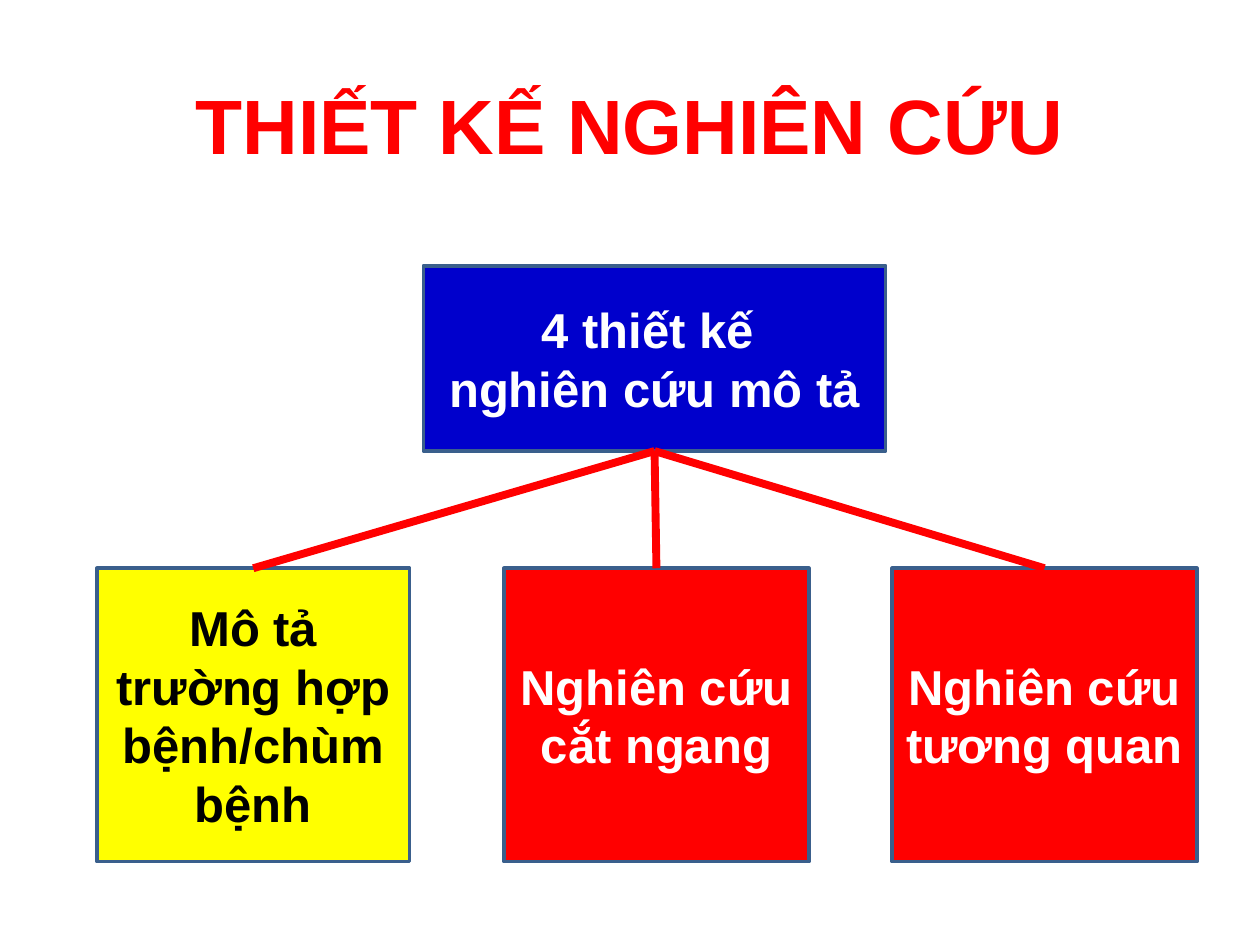
from dataclasses import dataclass

import lxml.etree
import pptx
import pptx.dml.color
import pptx.enum.shapes
import pptx.enum.text
import pptx.oxml.ns
import pptx.util

Inches = pptx.util.Inches
Pt = pptx.util.Pt

RED, BLUE, YELLOW = "FF0000", "0000CC", "FFFF00"
WHITE, BLACK, OUTLINE = "FFFFFF", "000000", "3A5F8C"


@dataclass
class Box:
    lines: list[str]
    left: float
    top: float
    width: float
    height: float
    fill: str
    text_color: str = WHITE

    @property
    def center(self) -> float:
        return self.left + self.width / 2

    @property
    def bottom(self) -> float:
        return self.top + self.height


DESIGN_TOP, DESIGN_HEIGHT = 4.51, 2.33
ROOT = Box(["4 thiết kế ", "nghiên cứu mô tả"], 3.36, 2.11, 3.67, 1.47, BLUE)
DESIGNS = [
    Box(["Mô tả trường hợp bệnh/chùm bệnh"], 0.77, DESIGN_TOP, 2.48, DESIGN_HEIGHT, YELLOW, BLACK),
    Box(["Nghiên cứu cắt ngang"], 4, DESIGN_TOP, 2.42, DESIGN_HEIGHT, RED),
    Box(["Nghiên cứu tương quan"], 7.08, DESIGN_TOP, 2.42, DESIGN_HEIGHT, RED),
]


def color(value: str) -> pptx.dml.color.RGBColor:
    return pptx.dml.color.RGBColor.from_string(value)


def write_text(shape, lines: list[str], size: float, text_color: str) -> None:
    frame = shape.text_frame
    frame.word_wrap = True
    frame.vertical_anchor = pptx.enum.text.MSO_ANCHOR.MIDDLE
    font_format = {"name": "Arial", "size": Pt(size), "bold": True}
    for index, line in enumerate(lines):
        paragraph = frame.add_paragraph() if index else frame.paragraphs[0]
        paragraph.alignment = pptx.enum.text.PP_ALIGN.CENTER
        run = paragraph.add_run()
        run.text = line
        for attribute, value in font_format.items():
            setattr(run.font, attribute, value)
        run.font.color.rgb = color(text_color)


def add_title(slide, text: str) -> None:
    title = slide.shapes.title
    position = {"left": 0.5, "top": 0.58, "width": 9, "height": 0.8}
    for attribute, value in position.items():
        setattr(title, attribute, Inches(value))
    write_text(title, [text], 44, RED)


def add_box(slide, box: Box) -> None:
    shape = slide.shapes.add_shape(
        pptx.enum.shapes.MSO_SHAPE.RECTANGLE,
        Inches(box.left), Inches(box.top), Inches(box.width), Inches(box.height),
    )
    shape.shadow.inherit = False
    shape.fill.solid()
    shape.fill.fore_color.rgb = color(box.fill)
    shape.line.color.rgb = color(OUTLINE)
    shape.line.width = Pt(2)
    write_text(shape, box.lines, 28, box.text_color)


def add_branch(slide, parent: Box, child: Box) -> None:
    connector = slide.shapes.add_connector(
        pptx.enum.shapes.MSO_CONNECTOR.STRAIGHT,
        Inches(parent.center), Inches(parent.bottom), Inches(child.center), Inches(child.top),
    )
    connector.line.color.rgb = color(RED)
    connector.line.width = Pt(4.5)
    # An empty effect list switches the theme shadow off
    properties = connector.element.find(pptx.oxml.ns.qn("p:spPr"))
    lxml.etree.SubElement(properties, pptx.oxml.ns.qn("a:effectLst"))


def main() -> None:
    presentation = pptx.Presentation()
    presentation.slide_width = Inches(10)
    presentation.slide_height = Inches(7.5)
    slide = presentation.slides.add_slide(presentation.slide_layouts.get_by_name("Title Only"))

    add_title(slide, "THIẾT KẾ NGHIÊN CỨU")

    # Study designs below their common root
    for box in [ROOT, *DESIGNS]:
        add_box(slide, box)
    for design in DESIGNS:
        add_branch(slide, ROOT, design)

    presentation.save("out.pptx")


if __name__ == "__main__":
    main()
